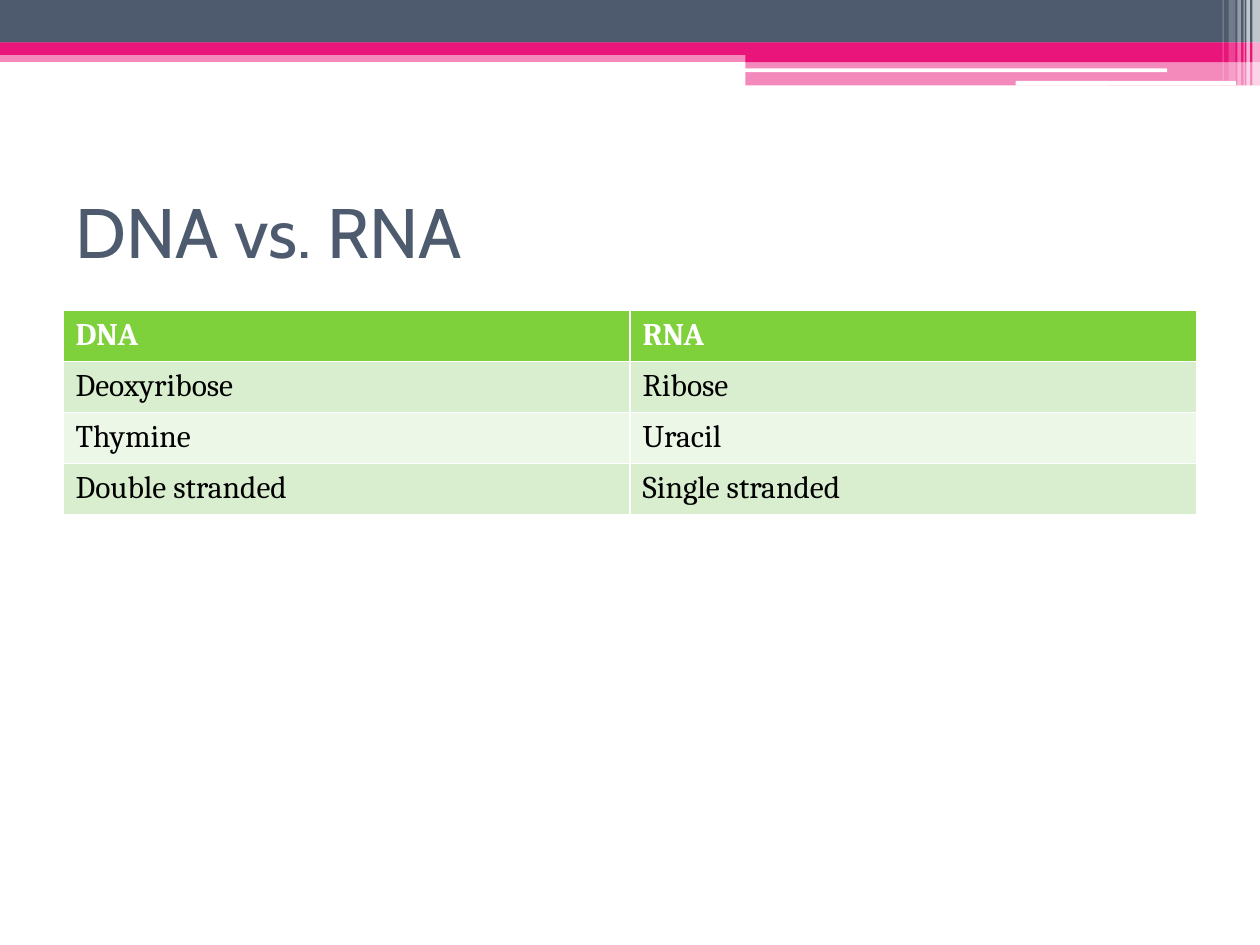
from pptx import Presentation
from pptx.dml.color import RGBColor
from pptx.enum.shapes import MSO_SHAPE
from pptx.enum.text import MSO_ANCHOR, PP_ALIGN
from pptx.oxml.ns import qn
from pptx.util import Pt
from lxml.etree import SubElement

SLATE = RGBColor(0x4E, 0x5B, 0x6F)
PINK = RGBColor(0xEA, 0x15, 0x7A)
WHITE = RGBColor(0xFF, 0xFF, 0xFF)
BLACK = RGBColor(0x00, 0x00, 0x00)
GREEN = RGBColor(0x7F, 0xD1, 0x3B)
LIGHT_GREEN = RGBColor(0xD8, 0xEE, 0xCE)
PALE_GREEN = RGBColor(0xEC, 0xF7, 0xE8)

deck = Presentation()
deck.slide_width, deck.slide_height = Pt(720), Pt(540)
page = deck.slides.add_slide(deck.slide_layouts[5])


def add_bar(left, top, width, height, color, opacity=100, kind=MSO_SHAPE.RECTANGLE):
    bar = page.shapes.add_shape(kind, Pt(left), Pt(top), Pt(width), Pt(height))
    bar.shadow.inherit = False
    bar.line.fill.background()
    bar.fill.solid()
    bar.fill.fore_color.rgb = color
    if opacity < 100:
        color_node = bar._element.spPr.find(qn("a:solidFill"))[0]
        SubElement(color_node, qn("a:alpha")).set("val", str(opacity * 1000))


add_bar(0, 28.8, 720, 6.6, PINK, 50)
add_bar(0, 0, 720, 24.4, SLATE)
add_bar(0, 24.2, 720, 7.2, PINK)
add_bar(426, 28.3, 294, 7.2, PINK)
add_bar(426, 34.6, 294, 14.2, PINK, 50)
add_bar(425.8, 39.1, 241.2, 2.2, WHITE, kind=MSO_SHAPE.ROUNDED_RECTANGLE)
add_bar(580.4, 46.3, 126, 2.6, WHITE, kind=MSO_SHAPE.ROUNDED_RECTANGLE)

stripes = [
    (715.6, 4.4, 49, 65),
    (712.2, 2, 49, 65),
    (710.6, 0.7, 49, 60),
    (707.1, 2, 49, 40),
    (702, 4, 46.1, 20),
    (698.6, 0.7, 46.1, 30),
]
for left, width, height, opacity in stripes:
    add_bar(left, 0, width, height, WHITE, opacity)

title = page.shapes.title
title.left, title.top, title.width, title.height = Pt(36), Pt(90), Pt(648), Pt(84)
title.text_frame.text = "DNA vs. RNA"
title.text_frame.vertical_anchor = MSO_ANCHOR.MIDDLE
paragraph = title.text_frame.paragraphs[0]
paragraph.alignment = PP_ALIGN.LEFT
span = paragraph.runs[0]
span.font.name = "Cabin"
span.font.size = Pt(40)
span.font.color.rgb = SLATE

rows = [
    ("DNA", "RNA"),
    ("Deoxyribose", "Ribose"),
    ("Thymine", "Uracil"),
    ("Double stranded", "Single stranded"),
]
row_fills = [GREEN, LIGHT_GREEN, PALE_GREEN, LIGHT_GREEN]
table = page.shapes.add_table(4, 2, Pt(36), Pt(177.4), Pt(648), Pt(116.8)).table
for row_index, (words, row_fill) in enumerate(zip(rows, row_fills)):
    is_header = row_index == 0
    for cell, word in zip(table.rows[row_index].cells, words):
        cell.fill.solid()
        cell.fill.fore_color.rgb = row_fill
        cell.text_frame.text = word
        span = cell.text_frame.paragraphs[0].runs[0]
        span.font.name = "Cambria"
        span.font.size = Pt(18)
        span.font.bold = is_header
        span.font.color.rgb = WHITE if is_header else BLACK

deck.save("out.pptx")
